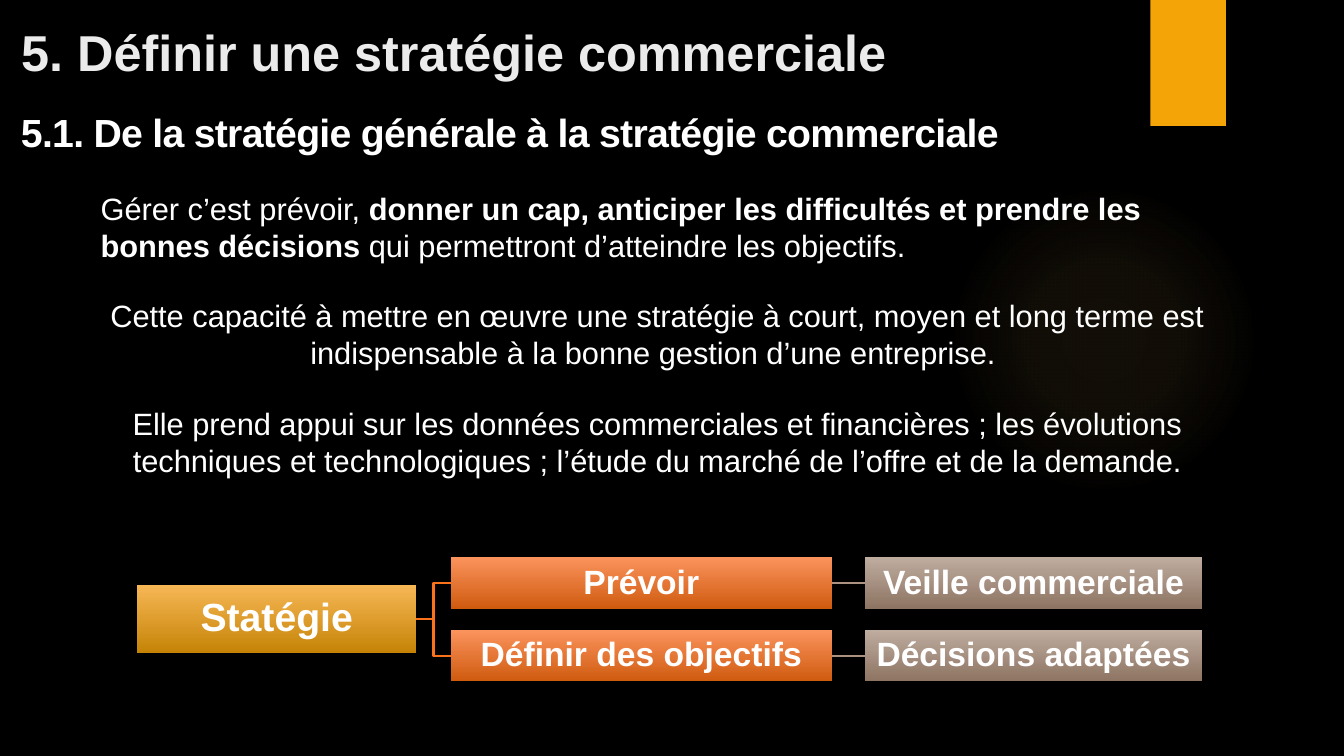
import pptx
import pptx.dml.color
import pptx.enum.shapes
import pptx.enum.text
import pptx.oxml
import pptx.oxml.ns
import pptx.util
from pptx.util import Inches

RGBColor = pptx.dml.color.RGBColor
SHAPE = pptx.enum.shapes.MSO_SHAPE
CONNECTOR = pptx.enum.shapes.MSO_CONNECTOR
ALIGN = pptx.enum.text.PP_ALIGN
ANCHOR = pptx.enum.text.MSO_ANCHOR

BLACK = RGBColor(0x00, 0x00, 0x00)
WHITE = RGBColor(0xFF, 0xFF, 0xFF)
TITLE_GREY = RGBColor(0xEB, 0xEB, 0xEB)
ACCENT = RGBColor(0xF5, 0xA4, 0x08)
GOLD = (RGBColor(0xF7, 0xB7, 0x56), RGBColor(0xC5, 0x84, 0x06))
ORANGE = (RGBColor(0xFB, 0x93, 0x5D), RGBColor(0xCF, 0x5B, 0x0F))
TAUPE = (RGBColor(0xBE, 0xAC, 0x9F), RGBColor(0x8E, 0x74, 0x63))
ORANGE_LINE = RGBColor(0xFA, 0x73, 0x1A)
TAUPE_LINE = RGBColor(0xAB, 0x92, 0x81)


def add_box(label, left, top, width, height, size, colors):
    box = slide.shapes.add_shape(SHAPE.RECTANGLE, Inches(left), Inches(top),
                                 Inches(width), Inches(height))
    box.shadow.inherit = False
    box.line.fill.background()
    box.fill.gradient()
    box.fill.gradient_angle = 270
    for stop, color in zip(box.fill.gradient_stops, colors):
        stop.color.rgb = color
    frame = box.text_frame
    frame.margin_left = frame.margin_right = Inches(0.02)
    frame.margin_top = frame.margin_bottom = Inches(0.02)
    frame.vertical_anchor = ANCHOR.MIDDLE
    frame.text = label
    paragraph = frame.paragraphs[0]
    paragraph.alignment = ALIGN.CENTER
    paragraph.line_spacing = 0.9
    font = paragraph.runs[0].font
    font.name, font.size, font.bold = "Arial", pptx.util.Pt(size), True
    font.color.rgb = WHITE
    return box


def join(kind, start, end, color):
    link = slide.shapes.add_connector(kind, 0, 0, 0, 0)
    link.begin_connect(start, 3)
    link.end_connect(end, 1)
    link.line.color.rgb = color
    link.line.width = pptx.util.Pt(1.5)
    link._element.spPr.append(pptx.oxml.parse_xml(
        f'<a:effectLst {pptx.oxml.ns.nsdecls("a")}/>'))


presentation = pptx.Presentation()
presentation.slide_width = Inches(13.33)
presentation.slide_height = Inches(7.5)
slide = presentation.slides.add_slide(presentation.slide_layouts[5])
slide.background.fill.solid()
slide.background.fill.fore_color.rgb = BLACK

# Soft glow on the right
glow = slide.shapes.add_shape(SHAPE.OVAL, Inches(9.41), Inches(1.83), Inches(3.08), Inches(3.08))
glow.shadow.inherit = False
glow.line.fill.background()
glow.fill.background()
stops = "".join(
    f'<a:gs pos="{pos}000"><a:srgbClr val="FAC96A"><a:alpha val="{alpha}000"/></a:srgbClr></a:gs>'
    for pos, alpha in ((0, 7), (36, 6), (69, 0)))
no_fill = glow._element.spPr.find(pptx.oxml.ns.qn("a:noFill"))
no_fill.getparent().replace(no_fill, pptx.oxml.parse_xml(
    f'<a:gradFill {pptx.oxml.ns.nsdecls("a")}><a:gsLst>{stops}</a:gsLst><a:path path="circle">'
    '<a:fillToRect l="50000" t="50000" r="50000" b="50000"/></a:path></a:gradFill>'))

# Accent bar at the top
bar = slide.shapes.add_shape(SHAPE.RECTANGLE, Inches(11.41), 0, Inches(0.75), Inches(1.25))
bar.shadow.inherit = False
bar.line.fill.background()
bar.fill.solid()
bar.fill.fore_color.rgb = ACCENT

# Title
title = slide.shapes.title
title.left, title.top = Inches(0.11), 0
title.width, title.height = Inches(11.81), Inches(0.86)
title.text_frame.text = "5. Définir une stratégie commerciale"
title.text_frame.auto_size = pptx.enum.text.MSO_AUTO_SIZE.NONE
title.text_frame.vertical_anchor = ANCHOR.BOTTOM
title.text_frame.paragraphs[0].alignment = ALIGN.LEFT
title_font = title.text_frame.paragraphs[0].runs[0].font
title_font.name, title_font.size, title_font.bold = "Arial", pptx.util.Pt(36), True
title_font.color.rgb = TITLE_GREY

# Subtitle and explanation: alignment, then (text, bold) runs
explanation = [
    (ALIGN.LEFT, [("5.1. De la stratégie générale à la stratégie commerciale", True)]),
    (ALIGN.LEFT, [
        ("Gérer c’est prévoir, ", False),
        ("donner un cap, anticiper les difficultés et prendre les bonnes décisions", True),
        (" qui permettront d’atteindre les objectifs.", False)]),
    (ALIGN.CENTER, [
        ("Cette capacité à mettre en œuvre une stratégie à court, moyen et long terme est "
         "indispensable à la bonne gestion d’une entreprise. ", False)]),
    (ALIGN.CENTER, [
        ("Elle prend appui sur les données commerciales et financières ; les évolutions "
         "techniques et technologiques ; l’étude du marché de l’offre et de la demande.", False)]),
]
body = slide.shapes.add_textbox(Inches(0.11), Inches(1.03), Inches(12.03), Inches(3.8)).text_frame
body.word_wrap = True
for number, (alignment, pieces) in enumerate(explanation):
    paragraph = body.add_paragraph() if number else body.paragraphs[0]
    paragraph.alignment = alignment
    paragraph.space_after = pptx.util.Pt(6)
    if number:
        paragraph.space_before = pptx.util.Pt(18)
        paragraph._p.get_or_add_pPr().set("marL", str(Inches(0.79)))
    for text, bold in pieces:
        run = paragraph.add_run()
        run.text = text
        run.font.name, run.font.bold = "Arial", bold
        run.font.size = pptx.util.Pt(22 if number else 28)
        run.font.color.rgb = WHITE
        if not number:
            run._r.get_or_add_rPr().set("spc", "-50")

# Strategy tree: one root, two branches, one outcome each
strategy = add_box("Statégie", 1.36, 5.8, 2.77, 0.68, 28, GOLD)
branches = [("Prévoir", "Veille commerciale"),
            ("Définir des objectifs", "Décisions adaptées")]
for row, (goal_label, outcome_label) in enumerate(branches):
    top = 5.53 + 0.72 * row
    goal = add_box(goal_label, 4.47, top, 3.78, 0.51, 24, ORANGE)
    outcome = add_box(outcome_label, 8.58, top, 3.34, 0.51, 24, TAUPE)
    join(CONNECTOR.ELBOW, strategy, goal, ORANGE_LINE)
    join(CONNECTOR.STRAIGHT, goal, outcome, TAUPE_LINE)

presentation.save("out.pptx")
